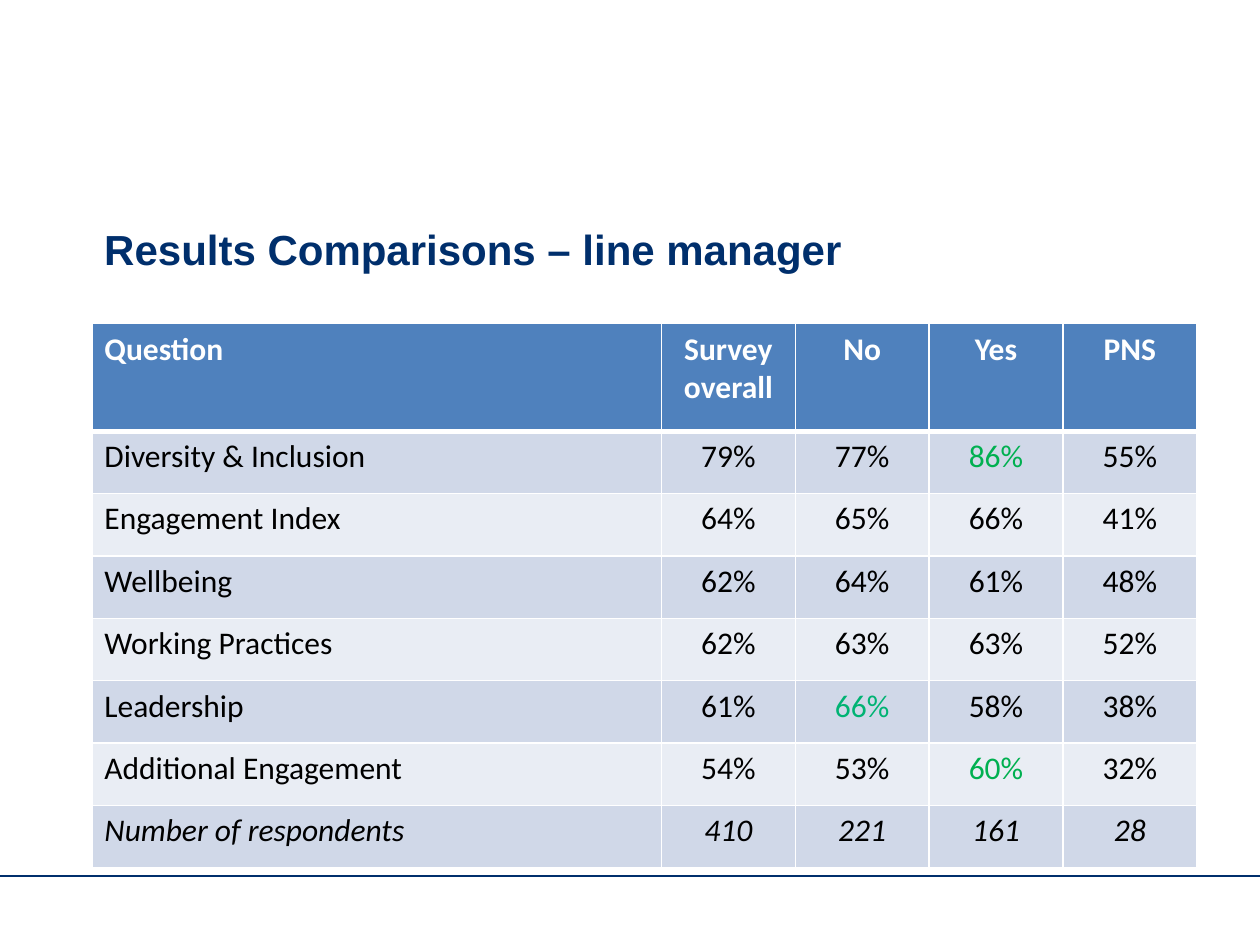
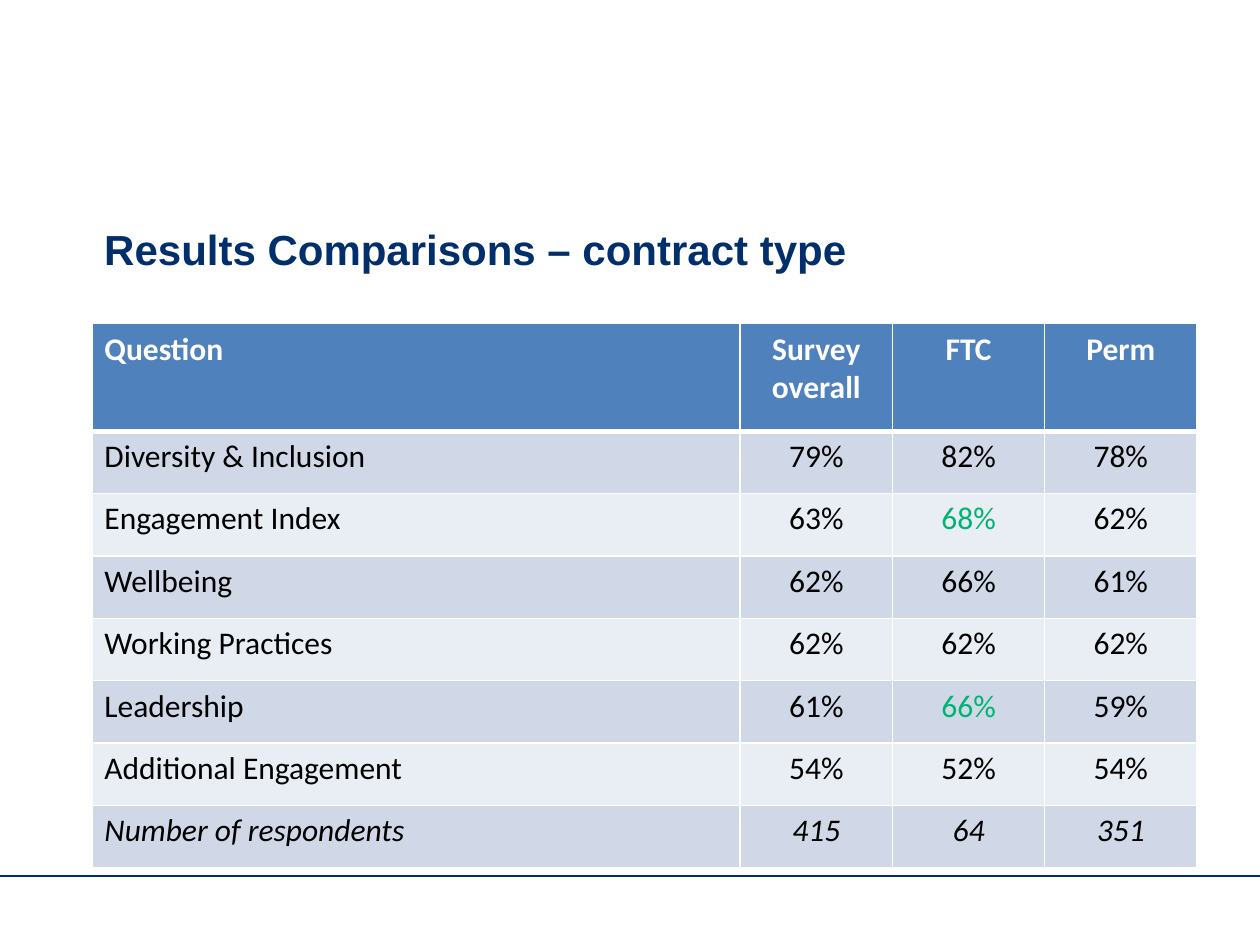
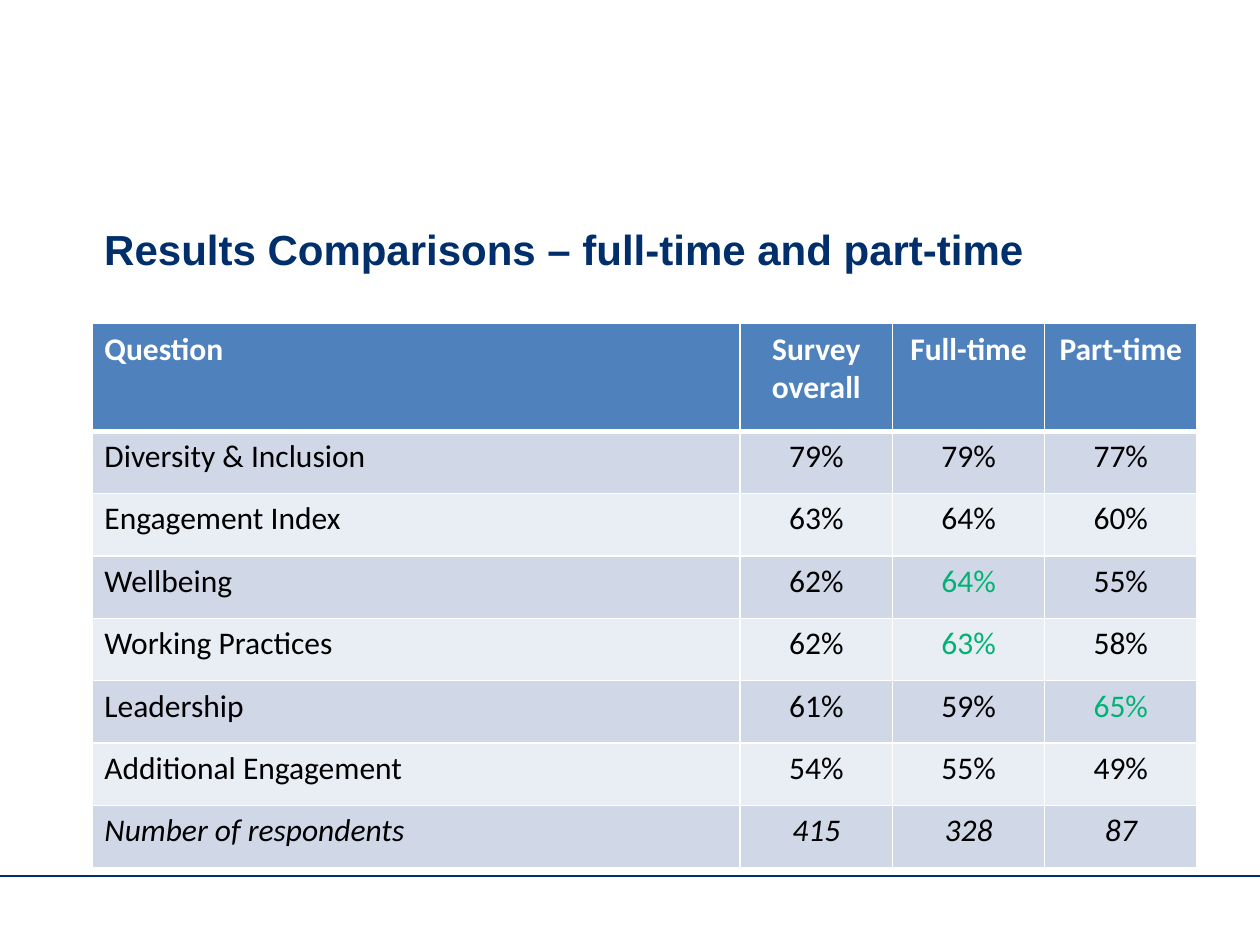
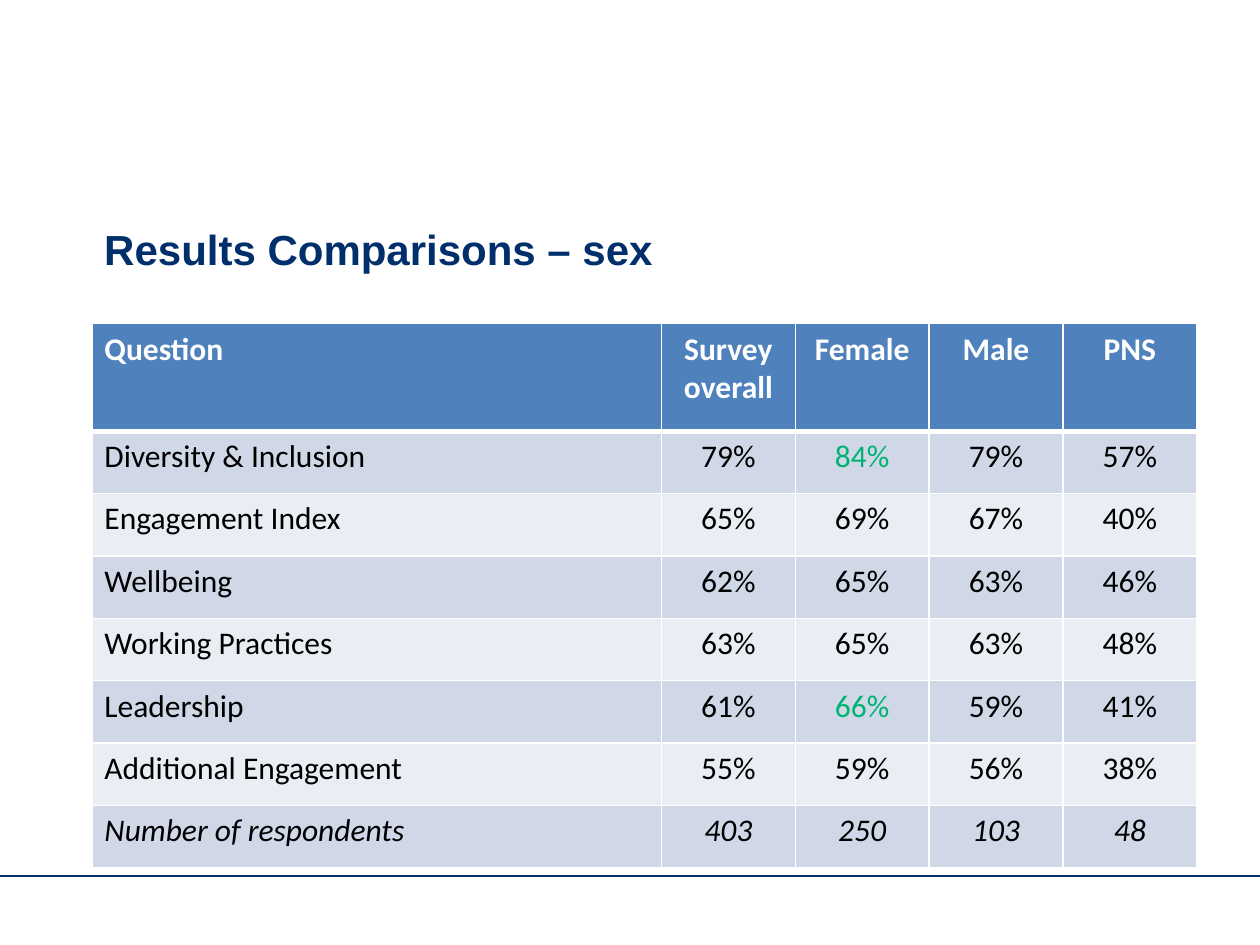
from pptx import Presentation
from pptx.dml.color import RGBColor
from pptx.enum.shapes import MSO_CONNECTOR as Connector
from pptx.enum.text import PP_ALIGN as Align
from pptx.oxml.ns import qn
from pptx.util import Pt
from lxml.etree import SubElement

NAVY = "002F6C"
WHITE = "FFFFFF"
BLACK = "000000"
HEADER_BLUE = "4F81BD"
BANDS = ("E9EDF4", "D0D8E8")
GREEN = "00B050"
TEAL = "00B373"

PAGE_WIDTH, PAGE_HEIGHT = 720, 540
LEFT, CONTENT_WIDTH = 52.5, 631.5
TITLE_TOP, TITLE_HEIGHT = 124, 60.5
TABLE_TOP, HEADER_HEIGHT, ROW_HEIGHT = 185, 61.5, 35.65
FOOTER_Y = 500.5
SCORE_WIDTHS = {3: 87, 4: 76.5}

QUESTIONS = ["Diversity & Inclusion", "Engagement Index", "Wellbeing",
             "Working Practices", "Leadership", "Additional Engagement"]

COMPARISONS = [
    {"topic": "line manager",
     "groups": ["No", "Yes", "PNS"],
     "scores": [(79, 77, 86, 55), (64, 65, 66, 41), (62, 64, 61, 48),
                (62, 63, 63, 52), (61, 66, 58, 38), (54, 53, 60, 32)],
     "respondents": (410, 221, 161, 28),
     "highlights": {(1, 3): GREEN, (5, 2): TEAL, (6, 3): GREEN}},
    {"topic": "contract type",
     "groups": ["FTC", "Perm"],
     "scores": [(79, 82, 78), (63, 68, 62), (62, 66, 61),
                (62, 62, 62), (61, 66, 59), (54, 52, 54)],
     "respondents": (415, 64, 351),
     "highlights": {(2, 2): TEAL, (5, 2): TEAL}},
    {"topic": "full-time and part-time",
     "groups": ["Full-time", "Part-time"],
     "scores": [(79, 79, 77), (63, 64, 60), (62, 64, 55),
                (62, 63, 58), (61, 59, 65), (54, 55, 49)],
     "respondents": (415, 328, 87),
     "highlights": {(3, 2): TEAL, (4, 2): TEAL, (5, 3): TEAL}},
    {"topic": "sex",
     "groups": ["Female", "Male", "PNS"],
     "scores": [(79, 84, 79, 57), (65, 69, 67, 40), (62, 65, 63, 46),
                (63, 65, 63, 48), (61, 66, 59, 41), (55, 59, 56, 38)],
     "respondents": (403, 250, 103, 48),
     "highlights": {(1, 2): TEAL, (5, 2): TEAL}},
]


def rgb(value):
    return RGBColor.from_string(value)


class Deck:
    def __init__(self):
        self.prs = Presentation()
        self.prs.slide_width = Pt(PAGE_WIDTH)
        self.prs.slide_height = Pt(PAGE_HEIGHT)
        self.slide = None

    def new_slide(self):
        self.slide = self.prs.slides.add_slide(self.prs.slide_layouts[6])
        self.footer_rule()

    def footer_rule(self):
        rule = self.slide.shapes.add_connector(
            Connector.STRAIGHT, Pt(0), Pt(FOOTER_Y), Pt(PAGE_WIDTH), Pt(FOOTER_Y))
        rule.line.color.rgb = rgb(NAVY)
        rule.line.width = Pt(1)
        SubElement(rule._element.spPr, qn("a:effectLst"))

    def set_text(self, frame, text, font, size, color, bold=False, italic=False,
                 align=Align.LEFT):
        frame.text = text
        paragraph = frame.paragraphs[0]
        paragraph.alignment = align
        for run in paragraph.runs:
            run.font.name = font
            run.font.size = Pt(size)
            run.font.bold = bold
            run.font.italic = italic
            run.font.color.rgb = rgb(color)

    def title(self, text):
        heading = self.slide.shapes.add_textbox(
            Pt(LEFT), Pt(TITLE_TOP), Pt(CONTENT_WIDTH), Pt(TITLE_HEIGHT))
        heading.text_frame.word_wrap = True
        self.set_text(heading.text_frame, text, "Arial", 24, NAVY, bold=True)

    def borders(self, cell, top, bottom):
        properties = cell._tc.get_or_add_tcPr()
        for side, width in (("L", 1), ("R", 1), ("T", top), ("B", bottom)):
            edge = SubElement(properties, qn(f"a:ln{side}"), w=str(Pt(width)))
            fill = SubElement(edge, qn("a:solidFill"))
            SubElement(fill, qn("a:srgbClr"), val=WHITE)

    def table(self, rows, highlights):
        score_count = len(rows[0]) - 1
        score_width = SCORE_WIDTHS[score_count]
        widths = [CONTENT_WIDTH - score_count * score_width] + [score_width] * score_count
        heights = [HEADER_HEIGHT] + [ROW_HEIGHT] * (len(rows) - 1)
        grid = self.slide.shapes.add_table(
            len(rows), len(widths), Pt(LEFT), Pt(TABLE_TOP),
            Pt(CONTENT_WIDTH), Pt(sum(heights))).table
        for column, width in zip(grid.columns, widths):
            column.width = Pt(width)
        for r, (values, height) in enumerate(zip(rows, heights)):
            grid.rows[r].height = Pt(height)
            header = r == 0
            for c, value in enumerate(values):
                cell = grid.cell(r, c)
                self.borders(cell, 3 if r == 1 else 1, 3 if header else 1)
                cell.fill.solid()
                cell.fill.fore_color.rgb = rgb(HEADER_BLUE if header else BANDS[r % 2])
                color = WHITE if header else highlights.get((r, c), BLACK)
                self.set_text(cell.text_frame, value, "Calibri", 18, color,
                              bold=header, italic=r == len(rows) - 1,
                              align=Align.CENTER if c else Align.LEFT)

    def comparison(self, topic, groups, scores, respondents, highlights):
        self.new_slide()
        self.title(f"Results Comparisons – {topic}")
        rows = [["Question", "Survey overall", *groups]]
        rows += [[question, *(f"{score}%" for score in line)]
                 for question, line in zip(QUESTIONS, scores)]
        rows.append(["Number of respondents", *map(str, respondents)])
        self.table(rows, highlights)


def main():
    deck = Deck()
    for comparison in COMPARISONS:
        deck.comparison(**comparison)
    deck.prs.save("out.pptx")


if __name__ == "__main__":
    main()
